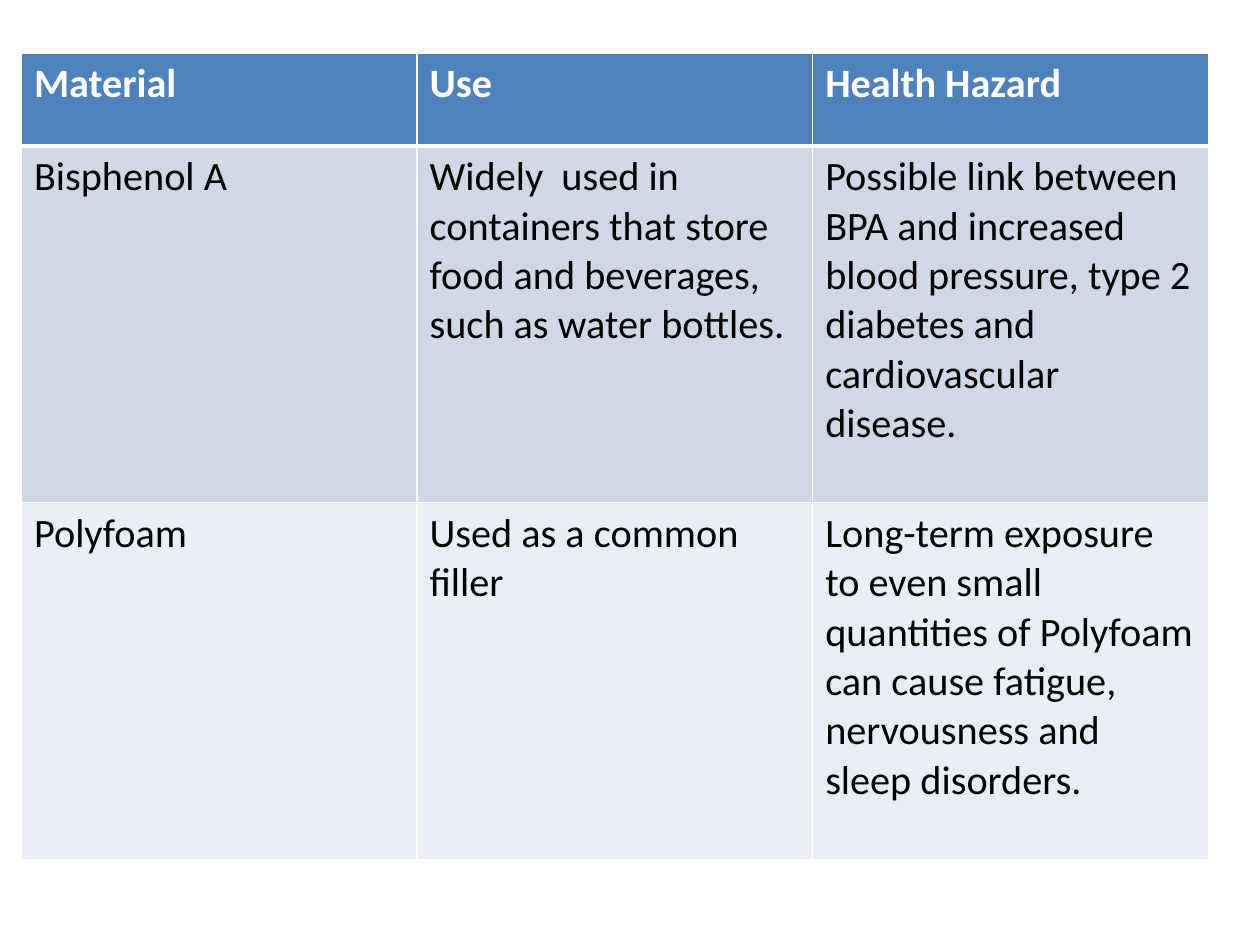
"""Build a slide with a table of materials, their uses and health hazards."""
from dataclasses import dataclass

from lxml.etree import SubElement
from pptx import Presentation
from pptx.dml.color import RGBColor as Rgb
from pptx.oxml.ns import qn
from pptx.table import _Cell as Cell
from pptx.util import Inches, Pt

WHITE = Rgb(0xFF, 0xFF, 0xFF)
BLACK = Rgb(0, 0, 0)
BLUE = Rgb(0x4F, 0x81, 0xBD)
PALE = Rgb(0xD0, 0xD8, 0xE8)
LIGHT = Rgb(0xE9, 0xED, 0xF4)


@dataclass(frozen=True)
class Row:
    texts: tuple[str, str, str]
    height: float
    fill: Rgb
    color: Rgb = BLACK
    bold: bool = False
    top: float = 1
    bottom: float = 1


ROWS = (
    Row(("Material", "Use", "Health Hazard"), 0.74, BLUE, WHITE, True, bottom=3),
    Row(
        (
            "Bisphenol A",
            "Widely  used in containers that store food and beverages, such as water bottles.",
            "Possible link between BPA and increased blood pressure, type 2 diabetes "
            "and cardiovascular disease.",
        ),
        2.83, PALE, top=3,
    ),
    Row(
        (
            "Polyfoam",
            "Used as a common filler",
            "Long-term exposure to even small quantities of Polyfoam can cause fatigue, "
            "nervousness and sleep disorders.",
        ),
        2.83, LIGHT,
    ),
)


def write(cell: Cell, text: str, *, color: Rgb, bold: bool, size: float = 23) -> None:
    run = cell.text_frame.paragraphs[0].add_run()
    run.text = text
    font = run.font
    font.name, font.size, font.bold = "Calibri", Pt(size), bold
    font.color.rgb = color


def edge(cell: Cell, **widths: float) -> None:
    props = cell._tc.get_or_add_tcPr()
    for side, width in widths.items():
        line = SubElement(props, qn(f"a:ln{side}"), w=str(Pt(width)))
        fill = SubElement(line, qn("a:solidFill"))
        SubElement(fill, qn("a:srgbClr"), val=str(WHITE))


def draw(cell: Cell, text: str, row: Row) -> None:
    edge(cell, L=1, R=1, T=row.top, B=row.bottom)
    cell.fill.solid()
    cell.fill.fore_color.rgb = row.fill
    write(cell, text, color=row.color, bold=row.bold)


def main() -> None:
    deck = Presentation()
    deck.slide_width, deck.slide_height = Inches(10), Inches(7.5)
    slide = deck.slides.add_slide(deck.slide_layouts[6])
    high = sum(row.height for row in ROWS)
    table = slide.shapes.add_table(
        len(ROWS), 3, Inches(0.17), Inches(0.42), Inches(9.42), Inches(high)
    ).table
    for line, row in zip(table.rows, ROWS):
        line.height = Inches(row.height)
        for cell, text in zip(line.cells, row.texts):
            draw(cell, text, row)
    deck.save("out.pptx")


if __name__ == "__main__":
    main()
